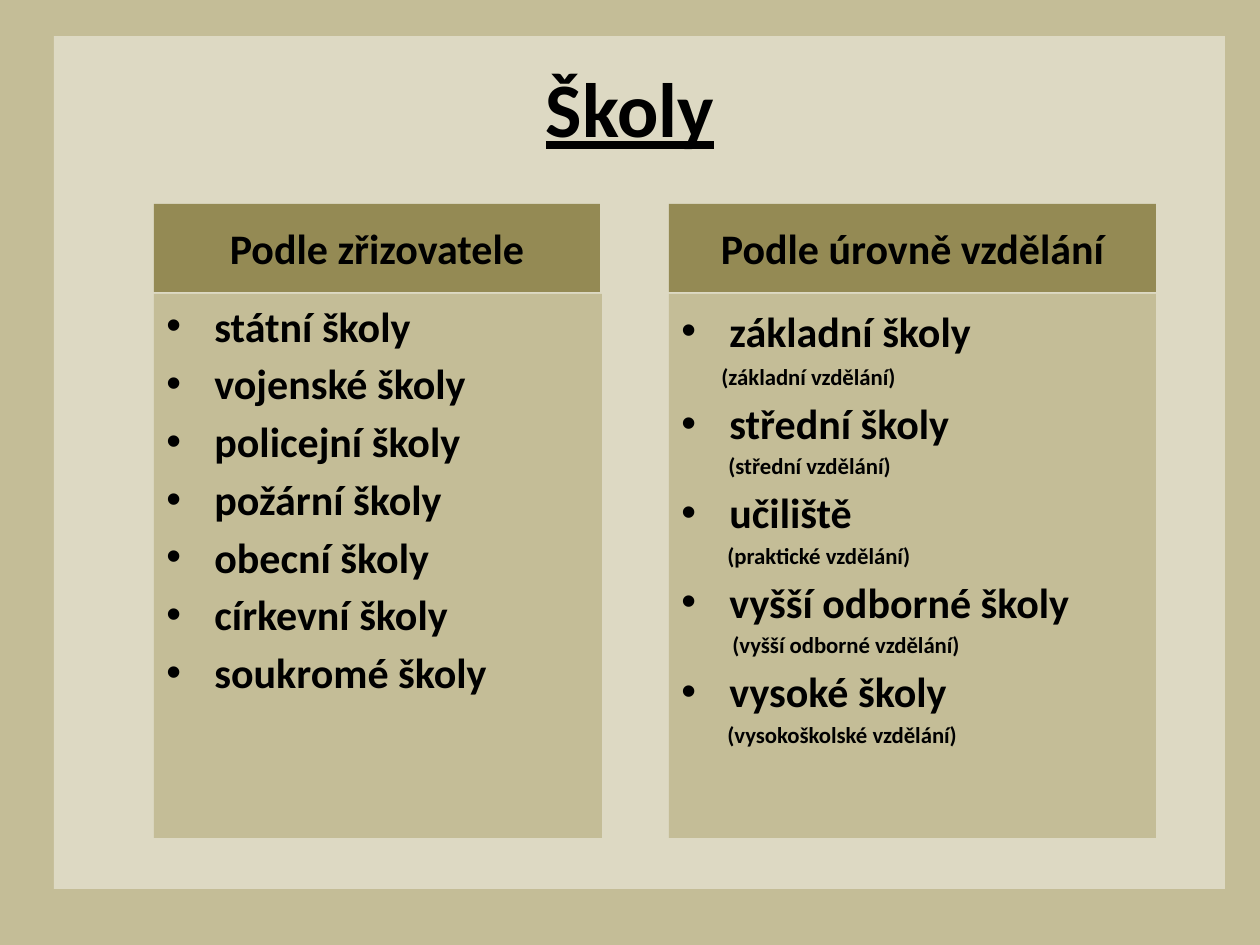
import pptx
import pptx.dml.color
import pptx.enum.shapes
import pptx.enum.text
import pptx.oxml
import pptx.oxml.ns
import pptx.util

RGBColor = pptx.dml.color.RGBColor
Pt = pptx.util.Pt
PP_ALIGN = pptx.enum.text.PP_ALIGN
MSO_ANCHOR = pptx.enum.text.MSO_ANCHOR

SCALE = 914400 / 126
KHAKI = RGBColor(0xC4, 0xBD, 0x97)
CREAM = RGBColor(0xDD, 0xD9, 0xC3)
OLIVE = RGBColor(0x94, 0x8A, 0x54)
BLACK = RGBColor(0, 0, 0)

HANGING = 48
HEADER_TOP, HEADER_HEIGHT = 204, 88
LIST_TOP, LIST_HEIGHT = 294, 544

FOUNDERS = ["státní školy", "vojenské školy", "policejní školy", "požární školy",
            "obecní školy", "církevní školy", "soukromé školy"]
# school, level of education, indent of the level, line spacing
LEVELS = [
    ("základní školy", "(základní vzdělání)", 40, 1.1),
    ("střední školy", "(střední vzdělání)", 47, 1.0),
    ("učiliště", "(praktické vzdělání)", 46, 1.0),
    ("vyšší odborné školy", "(vyšší odborné vzdělání)", 51, 1.0),
    ("vysoké školy", "(vysokoškolské vzdělání)", 46, 1.0),
]


def px(n):
    return pptx.util.Emu(round(n * SCALE))


def set_format(obj, values):
    for name, value in values.items():
        setattr(obj, name, value)


def add_panel(s, box, color):
    sp = s.shapes.add_shape(pptx.enum.shapes.MSO_SHAPE.RECTANGLE, *map(px, box))
    sp.shadow.inherit = False
    sp.fill.solid()
    sp.fill.fore_color.rgb = color
    sp.line.fill.background()
    set_format(sp.text_frame, {"word_wrap": True, "vertical_anchor": MSO_ANCHOR.TOP})
    return sp


def add_text(p, text, size, underline=False, **paragraph_format):
    set_format(p, {"alignment": PP_ALIGN.LEFT, **paragraph_format})
    r = p.add_run()
    r.text = text
    set_format(r.font, {"name": "Calibri", "size": Pt(size), "bold": True,
                        "underline": underline})
    r.font.color.rgb = BLACK


def set_indent(p, left, first=0, bullet=None):
    pPr = p._p.get_or_add_pPr()
    pPr.set("marL", str(px(left)))
    pPr.set("indent", str(px(first)))
    if bullet:
        ns = pptx.oxml.ns.nsdecls("a")
        pPr.append(pptx.oxml.parse_xml(f'<a:buFont {ns} typeface="Arial"/>'))
        pPr.append(pptx.oxml.parse_xml(f'<a:buChar {ns} char="{bullet}"/>'))


def add_title(s, text):
    tf = s.shapes.add_textbox(*map(px, (63, 38, 1134, 137))).text_frame
    set_format(tf, {"word_wrap": True, "vertical_anchor": MSO_ANCHOR.MIDDLE})
    add_text(tf.paragraphs[0], text, 44, underline=True, alignment=PP_ALIGN.CENTER)


def add_header(s, left, width, text):
    tf = add_panel(s, (left, HEADER_TOP, width, HEADER_HEIGHT), OLIVE).text_frame
    tf.vertical_anchor = MSO_ANCHOR.MIDDLE
    add_text(tf.paragraphs[0], text, 24, alignment=PP_ALIGN.CENTER)


def add_list(s, left, width, items):
    """Items are (text, size, indent, line spacing, space before, bullet)."""
    tf = add_panel(s, (left, LIST_TOP, width, LIST_HEIGHT), KHAKI).text_frame
    for i, (text, size, indent, spacing, before, bullet) in enumerate(items):
        p = tf.add_paragraph() if i else tf.paragraphs[0]
        add_text(p, text, size, line_spacing=spacing, space_before=Pt(before))
        set_indent(p, indent, -HANGING if bullet else 0, bullet)


def school(text, spacing=1.0):
    return text, 24, HANGING, spacing, 4.2, "•"


def level(text, indent, spacing):
    return text, 13, indent, spacing, 2.5, None


def main():
    prs = pptx.Presentation()
    set_format(prs, {"slide_width": px(1260), "slide_height": px(945)})
    s = prs.slides.add_slide(prs.slide_layouts[6])
    s.background.fill.solid()
    s.background.fill.fore_color.rgb = KHAKI

    add_panel(s, (54, 36, 1171, 853), CREAM)
    add_title(s, "Školy")
    add_header(s, 154, 446, "Podle zřizovatele")
    add_list(s, 154, 448, [school(name) for name in FOUNDERS])
    add_header(s, 669, 487, "Podle úrovně vzdělání")
    add_list(s, 669, 487, [
        item for name, note, indent, spacing in LEVELS
        for item in (school(name, spacing), level(note, indent, spacing))])
    prs.save("out.pptx")


if __name__ == "__main__":
    main()
